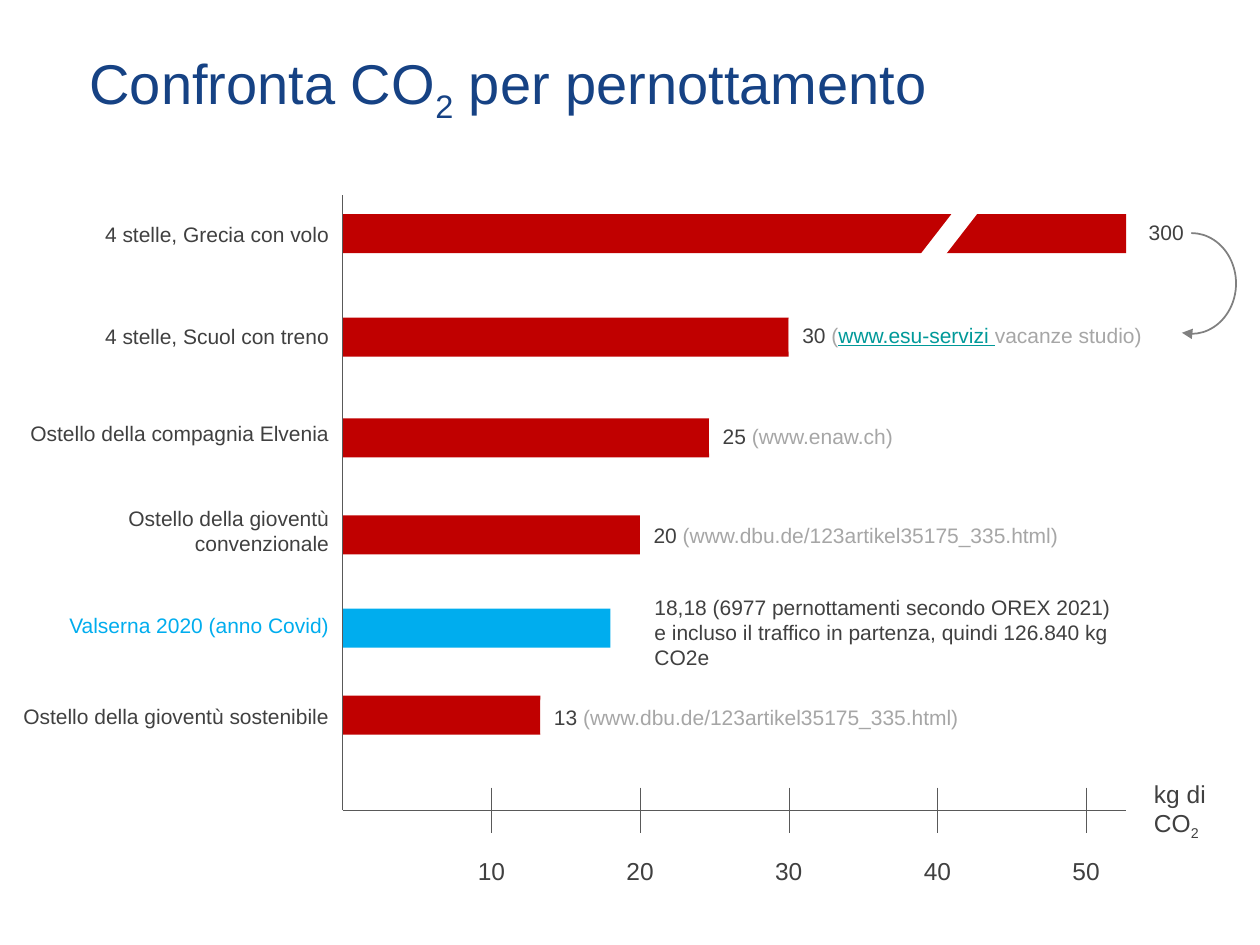
import pptx
import pptx.dml.color
import pptx.enum.shapes
import pptx.enum.text
import pptx.util
from pptx.oxml.ns import qn
from lxml import etree

RGBColor = pptx.dml.color.RGBColor
MSO_SHAPE = pptx.enum.shapes.MSO_SHAPE
PP_ALIGN = pptx.enum.text.PP_ALIGN
MSO_ANCHOR = pptx.enum.text.MSO_ANCHOR
Inches = pptx.util.Inches
Pt = pptx.util.Pt

NAVY = RGBColor(0x16, 0x42, 0x84)
RED = RGBColor(0xC0, 0x00, 0x00)
CYAN = RGBColor(0x00, 0xAD, 0xEE)
TEAL = RGBColor(0x00, 0x99, 0x99)
DARK = RGBColor(0x40, 0x40, 0x40)
AXIS = RGBColor(0x59, 0x59, 0x59)
MID = RGBColor(0x80, 0x80, 0x80)
PALE = RGBColor(0xA6, 0xA6, 0xA6)
WHITE = RGBColor(0xFF, 0xFF, 0xFF)

deck = pptx.Presentation()
deck.slide_width, deck.slide_height = Inches(10), Inches(7.5)
slide = deck.slides.add_slide(deck.slide_layouts[5])
shapes = slide.shapes

# Horizontal scale: the axis starts at ORIGIN and each kg takes KG inches.
ORIGIN, KG = 2.72, 0.118
AXIS_TOP, AXIS_Y, AXIS_END = 1.55, 6.43, 8.94
BAR_HEIGHT, LABEL_HEIGHT = 0.31, 0.32


def add_block(kind, left, top, width, height, fill):
    block = shapes.add_shape(kind, Inches(left), Inches(top), Inches(width), Inches(height))
    block.shadow.inherit = False
    block.fill.solid()
    block.fill.fore_color.rgb = fill
    block.line.fill.background()
    return block


def add_label(left, top, width, height, paragraphs, size=12, align=PP_ALIGN.LEFT):
    """Add a white label; each paragraph is a list of (text, colour) runs."""
    label = add_block(MSO_SHAPE.ROUNDED_RECTANGLE, left, top, width, height, WHITE)
    label.adjustments[0] = 0.1
    frame = label.text_frame
    frame.word_wrap = True
    frame.auto_size = pptx.enum.text.MSO_AUTO_SIZE.SHAPE_TO_FIT_TEXT
    frame.vertical_anchor = MSO_ANCHOR.MIDDLE
    for number, runs in enumerate(paragraphs):
        paragraph = frame.add_paragraph() if number else frame.paragraphs[0]
        paragraph.alignment = align
        paragraph.font.size, paragraph.font.name = Pt(size), "Arial"
        for text, colour in runs:
            run = paragraph.add_run()
            run.text = text
            run.font.color.rgb = colour
            run.font.underline = True if colour == TEAL else None
    return frame.paragraphs[0]


title = shapes.title
title.left, title.top, title.width, title.height = map(Inches, (0.71, 0, 9.29, 0.99))
heading = title.text_frame
heading.margin_left = heading.margin_right = heading.margin_top = heading.margin_bottom = 0
heading.vertical_anchor = MSO_ANCHOR.BOTTOM
headline = heading.paragraphs[0]
headline.alignment = PP_ALIGN.LEFT
headline.font.size, headline.font.name = Pt(32), "Arial"
headline.font.color.rgb = NAVY
for part in ("Confronta CO", "2", " per pernottamento"):
    headline.add_run().text = part

unit = add_label(9.05, 6.25, 0.95, 0.36, [[("kg di CO", DARK), ("2", DARK)]], 14)
for paragraph in (headline, unit):
    paragraph.runs[1].font._element.set("baseline", "-25000")

# Name, colour, bar length in kg, note start in kg, tops of name, bar and note,
# note width and height, note
dbu = ("(www.dbu.de/123artikel35175_335.html)", PALE)
lodgings = [
    ("4 stelle, Grecia con volo", RED, 52.7, 53.3, 1.7, 1.7, 1.68, 0.72, LABEL_HEIGHT,
     [[("300", DARK)]]),
    ("4 stelle, Scuol con treno", RED, 30, 30, 2.51, 2.52, 2.5, 3.62, LABEL_HEIGHT,
     [[("30 ", DARK), ("(", PALE), ("www.esu-servizi ", TEAL), ("vacanze studio)", PALE)]]),
    ("Ostello della compagnia Elvenia", RED, 24.65, 24.65, 3.28, 3.32, 3.3, 3.23, LABEL_HEIGHT,
     [[("25 ", DARK), ("(www.enaw.ch)", PALE)]]),
    ("Ostello della gioventù convenzionale", RED, 20, 20, 4.05, 4.09, 4.09, 3.7, LABEL_HEIGHT,
     [[("20 ", DARK), dbu]]),
    ("Valserna 2020 (anno Covid)", CYAN, 18, 20, 4.8, 4.83, 4.75, 4.25, 0.53,
     [[("18,18 (6977 pernottamenti secondo OREX 2021)", DARK)],
      [("e incluso il traffico in partenza, quindi 126.840 kg CO2e", DARK)]]),
    ("Ostello della gioventù sostenibile", RED, 13.3, 13.3, 5.52, 5.52, 5.53, 3.54, LABEL_HEIGHT,
     [[("13 ", DARK), dbu]]),
]
for (name, colour, kg, note_kg, name_top, bar_top, note_top,
     note_width, note_height, note) in lodgings:
    name_colour = CYAN if colour == CYAN else DARK
    add_label(0, name_top, ORIGIN, LABEL_HEIGHT, [[(name, name_colour)]], align=PP_ALIGN.RIGHT)
    add_block(MSO_SHAPE.RECTANGLE, ORIGIN, bar_top, kg * KG, BAR_HEIGHT, colour)
    add_label(ORIGIN + note_kg * KG, note_top, note_width, note_height, note)

bar_break = add_block(MSO_SHAPE.RECTANGLE, 7.46, 1.49, 0.16, 0.71, WHITE)
bar_break.rotation = 37.8

axis_lines = [(ORIGIN, AXIS_Y, AXIS_END, AXIS_Y), (ORIGIN, AXIS_TOP, ORIGIN, AXIS_Y)]
for tick in range(10, 51, 10):
    x = ORIGIN + tick * KG
    axis_lines.append((x, AXIS_Y - 0.18, x, AXIS_Y + 0.18))
    add_label(x - 0.475, 6.73, 0.95, 0.36, [[(str(tick), DARK)]], 14, PP_ALIGN.CENTER)
for ends in axis_lines:
    line = shapes.add_connector(pptx.enum.shapes.MSO_CONNECTOR.STRAIGHT, *map(Inches, ends))
    line.line.color.rgb = AXIS
    line.line.width = Pt(0.25)
    etree.SubElement(line._element.spPr, qn("a:effectLst"))

arrow = shapes.add_shape(MSO_SHAPE.ARC, *map(Inches, (9.1, 1.85, 0.71, 0.8)))
arrow.shadow.inherit = False
arrow.fill.background()
arrow.adjustments[0], arrow.adjustments[1] = 162, 60.42
arrow.line.color.rgb = MID
arrow.line.width = Pt(1)
etree.SubElement(arrow.line._get_or_add_ln(), qn("a:tailEnd"), type="triangle")

deck.save("out.pptx")
